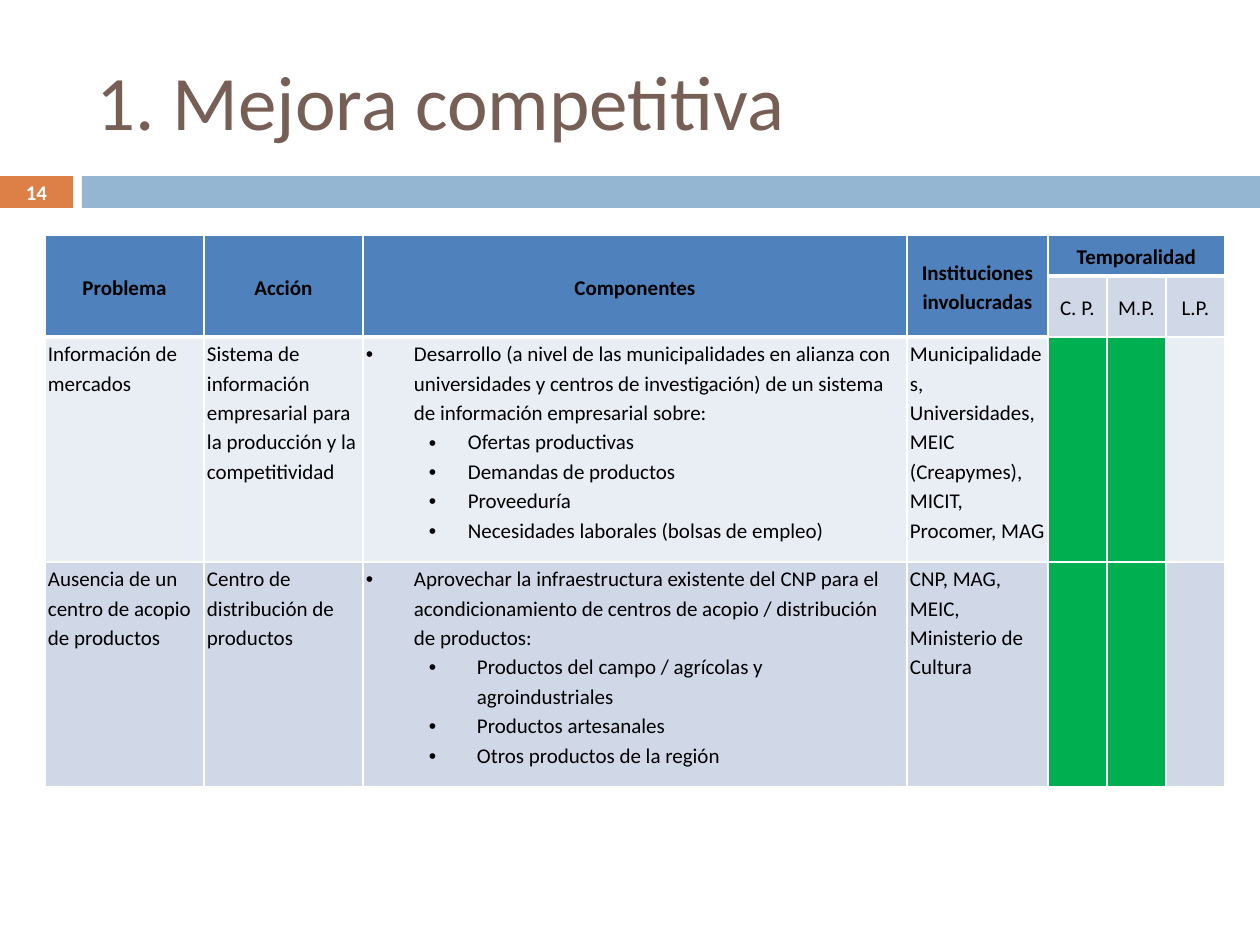
import pptx
import pptx.dml.color
import pptx.enum.shapes
import pptx.enum.text
import pptx.util
from lxml import etree

THEME = {
    "font": "Calibri",
    "title": "775F55", "accent": "DD8047", "band": "94B6D2",
    "header": "4F81BD", "light": "E9EDF4", "dark": "D0D8E8", "active": "00B050",
    "text": "000000", "white": "FFFFFF",
    "title_size": 44, "body_size": 12, "number_size": 11.9,
}
SCALE = 914400 // 126
DRAWING = "http://schemas.openxmlformats.org/drawingml/2006/main"
ALIGN = pptx.enum.text.PP_ALIGN
ANCHOR = pptx.enum.text.MSO_ANCHOR

TITLE = "1. Mejora competitiva"
PAGE_NUMBER = "14"
HEADINGS = ["Problema", "Acción", "Componentes", "Instituciones involucradas"]
TIME_HEADING = "Temporalidad"
TERMS = ["C. P.", "M.P.", "L.P."]
PROBLEMS = [
    {
        "cells": {
            0: "Información de mercados",
            1: "Sistema de información empresarial para la producción y la competitividad",
            3: "Municipalidades, Universidades, MEIC (Creapymes), MICIT, Procomer, MAG",
        },
        "lead": "Desarrollo (a nivel de las municipalidades en alianza con universidades y "
                "centros de investigación) de un sistema de información empresarial sobre:",
        "items": ["Ofertas productivas", "Demandas de productos", "Proveeduría",
                  "Necesidades laborales (bolsas de empleo)"],
        "item_indent": (102, 39), "fill": "light", "active_terms": 2,
    },
    {
        "cells": {
            0: "Ausencia de un centro de acopio de productos",
            1: "Centro de distribución de productos",
            3: "CNP, MAG, MEIC, Ministerio de Cultura",
        },
        "lead": "Aprovechar la infraestructura existente del CNP para el acondicionamiento "
                "de centros de acopio / distribución de productos:",
        "items": ["Productos del campo / agrícolas y agroindustriales",
                  "Productos artesanales", "Otros productos de la región"],
        "item_indent": (111, 48), "fill": "dark", "active_terms": 2,
    },
]
LEAD_INDENT = (48, 48)
COMPONENTS_COLUMN = 2
FIRST_TERM = len(HEADINGS)
FIRST_BODY_ROW = 2
COLUMN_WIDTHS = [159, 159, 544, 141, 59, 59, 59]
ROW_HEIGHTS = [41, 61, 225, 225]
TABLE_LEFT, TABLE_TOP = 45, 235


def px(*lengths):
    return [length * SCALE for length in lengths]


def color(name):
    return pptx.dml.color.RGBColor.from_string(THEME[name])


def apply_format(target, **values):
    for name, value in values.items():
        setattr(target, name, value)


def write(paragraph, text, size, color_name, bold=False, align=ALIGN.LEFT):
    paragraph.alignment = align
    run = paragraph.add_run()
    run.text = text
    apply_format(run.font, name=THEME["font"], size=pptx.util.Pt(THEME[size]), bold=bold)
    run.font.color.rgb = color(color_name)


def add_bar(slide, left, width, color_name):
    bar = slide.shapes.add_shape(
        pptx.enum.shapes.MSO_SHAPE.RECTANGLE, *px(left, 176, width, 32))
    bar.shadow.inherit = False
    bar.fill.solid()
    bar.fill.fore_color.rgb = color(color_name)
    bar.line.fill.background()


def add_text(slide, box, text, size, color_name, inset=13, **options):
    text_box = slide.shapes.add_textbox(*px(*box))
    frame = text_box.text_frame
    margin = inset * SCALE
    apply_format(frame, word_wrap=True, vertical_anchor=ANCHOR.MIDDLE,
                 margin_left=margin, margin_right=margin, margin_top=0, margin_bottom=0)
    write(frame.paragraphs[0], text, size, color_name, **options)


def add_bullet(paragraph, indent):
    left, hanging = px(*indent)
    properties = paragraph._p.get_or_add_pPr()
    properties.set("marL", str(left))
    properties.set("indent", str(-hanging))
    etree.SubElement(properties, f"{{{DRAWING}}}buFont", typeface="Arial")
    etree.SubElement(properties, f"{{{DRAWING}}}buChar", char="•")


def style_cell(cell, fill, top=1, bottom=1, anchor=ANCHOR.TOP):
    side, edge = px(3, 1)
    apply_format(cell, vertical_anchor=anchor, margin_left=side, margin_right=side,
                 margin_top=edge, margin_bottom=edge)
    properties = cell._tc.get_or_add_tcPr()
    for tag, points in {"lnL": 1, "lnR": 1, "lnT": top, "lnB": bottom}.items():
        line = etree.SubElement(properties, f"{{{DRAWING}}}{tag}", w=str(pptx.util.Pt(points)))
        solid = etree.SubElement(line, f"{{{DRAWING}}}solidFill")
        etree.SubElement(solid, f"{{{DRAWING}}}srgbClr", val=THEME["white"])
    cell.fill.solid()
    cell.fill.fore_color.rgb = color(fill)


def fill_cell(cell, entries, **options):
    """Write (text, indent) entries as paragraphs; an indent makes a bullet."""
    frame = cell.text_frame
    for index, (text, indent) in enumerate(entries):
        paragraph = frame.add_paragraph() if index else frame.paragraphs[0]
        paragraph.line_spacing = 1.15
        write(paragraph, text, "body_size", "text", **options)
        if indent:
            paragraph.level = int(index > 0)
            add_bullet(paragraph, indent)


def add_header(table):
    for column in range(len(COLUMN_WIDTHS)):
        is_term = column >= FIRST_TERM
        style_cell(table.cell(0, column), "header", bottom=3, anchor=ANCHOR.MIDDLE)
        style_cell(table.cell(1, column), "dark" if is_term else "header",
                   top=3 if is_term else 1, bottom=1 if is_term else 3, anchor=ANCHOR.MIDDLE)
    for column, heading in enumerate(HEADINGS + [TIME_HEADING]):
        fill_cell(table.cell(0, column), [(heading, None)], bold=True, align=ALIGN.CENTER)
        if column < FIRST_TERM:
            table.cell(0, column).merge(table.cell(1, column))
    table.cell(0, FIRST_TERM).merge(table.cell(0, len(COLUMN_WIDTHS) - 1))
    for column, term in enumerate(TERMS, FIRST_TERM):
        fill_cell(table.cell(1, column), [(term, None)], align=ALIGN.CENTER)


def add_problem(table, row, problem):
    for column in range(len(COLUMN_WIDTHS)):
        active = FIRST_TERM <= column < FIRST_TERM + problem["active_terms"]
        below_heading = row == FIRST_BODY_ROW and column < FIRST_TERM
        style_cell(table.cell(row, column), "active" if active else problem["fill"],
                   top=3 if below_heading else 1)
    for column, text in problem["cells"].items():
        fill_cell(table.cell(row, column), [(text, None)])
    entries = [(problem["lead"], LEAD_INDENT)]
    entries += [(item, problem["item_indent"]) for item in problem["items"]]
    fill_cell(table.cell(row, COMPONENTS_COLUMN), entries)


def add_plan(slide):
    table = slide.shapes.add_table(
        len(ROW_HEIGHTS), len(COLUMN_WIDTHS),
        *px(TABLE_LEFT, TABLE_TOP, sum(COLUMN_WIDTHS), sum(ROW_HEIGHTS))).table
    for column, width in zip(table.columns, px(*COLUMN_WIDTHS)):
        column.width = width
    for row, height in zip(table.rows, px(*ROW_HEIGHTS)):
        row.height = height
    add_header(table)
    for row, problem in enumerate(PROBLEMS, FIRST_BODY_ROW):
        add_problem(table, row, problem)


def main():
    presentation = pptx.Presentation()
    presentation.slide_width, presentation.slide_height = px(1260, 945)
    slide = presentation.slides.add_slide(presentation.slide_layouts[6])
    add_bar(slide, 0, 73, "accent")
    add_bar(slide, 82, 1178, "band")
    add_text(slide, (84, 32, 1124, 136), TITLE, "title_size", "title")
    add_plan(slide)
    add_text(slide, (0, 175, 73, 34), PAGE_NUMBER, "number_size", "white",
             inset=0, bold=True, align=ALIGN.CENTER)
    presentation.save("out.pptx")


if __name__ == "__main__":
    main()
